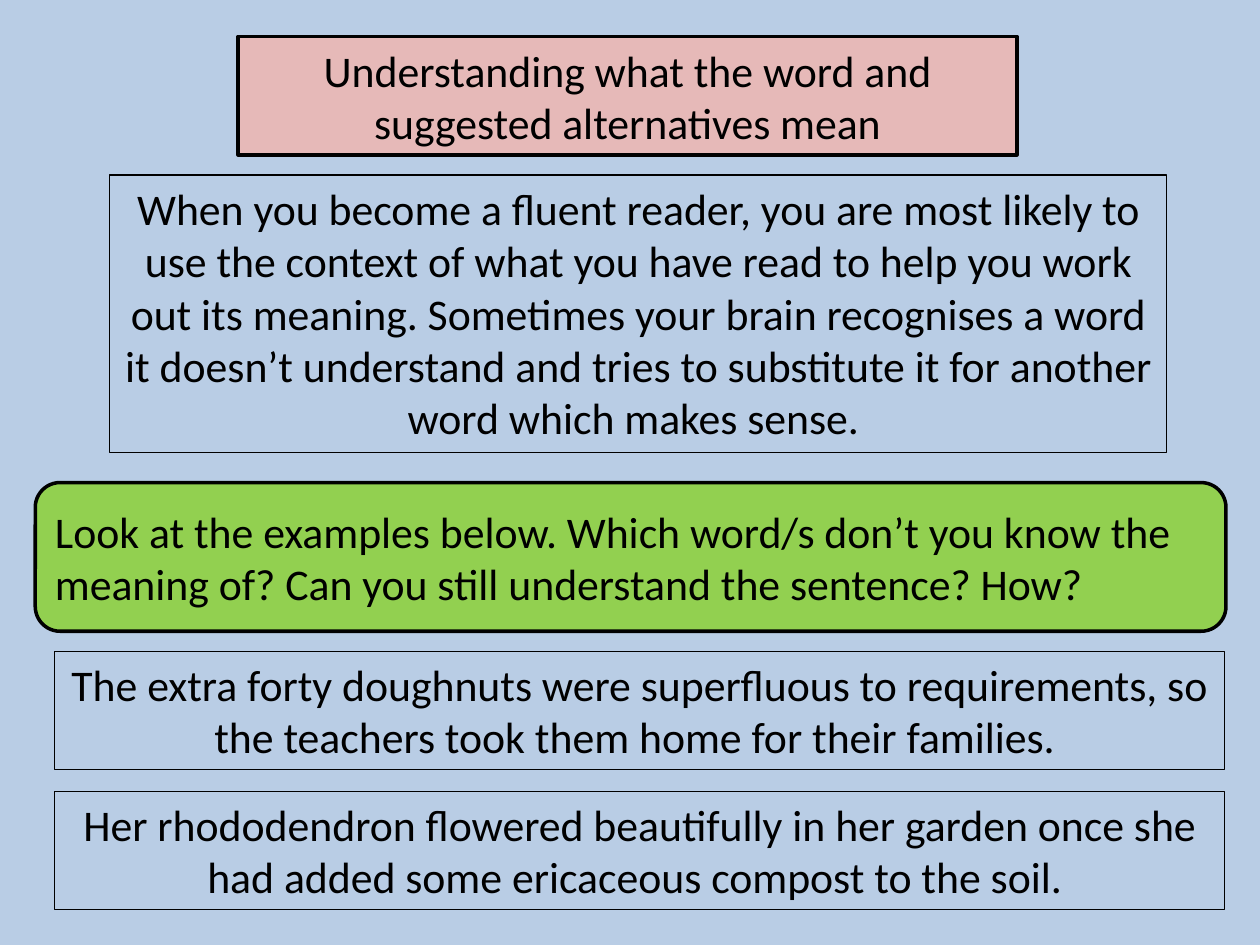
from lxml import etree
from pptx import Presentation
from pptx.dml.color import RGBColor
from pptx.enum import shapes, text
from pptx.oxml import ns
from pptx.util import Inches, Pt

BLUE = RGBColor(0xB9, 0xCD, 0xE5)
PINK = RGBColor(0xE6, 0xB9, 0xB8)
GREEN = RGBColor(0x92, 0xD0, 0x50)
BLACK = RGBColor(0, 0, 0)


def format_box(sp, words, fill, line_width, align):
    if fill is None:
        sp.fill.background()
    else:
        sp.fill.solid()
        sp.fill.fore_color.rgb = fill
    sp.line.color.rgb = BLACK
    sp.line.width = Pt(line_width)
    tf = sp.text_frame
    tf.text = words
    tf.word_wrap = True
    tf.auto_size = text.MSO_AUTO_SIZE.NONE
    tf.vertical_anchor = text.MSO_ANCHOR.MIDDLE
    p = tf.paragraphs[0]
    p.alignment = align
    font = p.runs[0].font
    font.name = "Calibri"
    font.size = Pt(25)
    font.color.rgb = BLACK


prs = Presentation()
prs.slide_width, prs.slide_height = Inches(10), Inches(7.5)
s = prs.slides.add_slide(prs.slide_layouts[5])
s.background.fill.solid()
s.background.fill.fore_color.rgb = BLUE

# Title in a rounded box
title = s.shapes.title
title.left, title.top = Inches(1.89), Inches(0.29)
title.width, title.height = Inches(6.18), Inches(0.94)
geometry = etree.Element(ns.qn("a:prstGeom"), prst="roundRect")
etree.SubElement(geometry, ns.qn("a:avLst"))
title.element.spPr.insert(1, geometry)
format_box(title, "Understanding what the word and suggested alternatives mean",
           PINK, 2, text.PP_ALIGN.CENTER)

# Question in a rounded box
question = s.shapes.add_shape(shapes.MSO_SHAPE.ROUNDED_RECTANGLE,
                              Inches(0.28), Inches(3.83), Inches(9.45), Inches(1.18))
question.shadow.inherit = False
format_box(question, "Look at the examples below. Which word/s don’t you know the "
           "meaning of? Can you still understand the sentence? How?",
           GREEN, 2, text.PP_ALIGN.LEFT)

# Explanation and example sentences in outlined text boxes
outlined = [
    (0.87, 1.39, 8.39, 2.2,
     "When you become a fluent reader, you are most likely to use the context of "
     "what you have read to help you work out its meaning. Sometimes your brain "
     "recognises a word it doesn’t understand and tries to substitute it for "
     "another word which makes sense. "),
    (0.43, 5.17, 9.29, 0.94,
     "The extra forty doughnuts were superfluous to requirements, so the teachers "
     "took them home for their families. "),
    (0.43, 6.28, 9.29, 0.94,
     "Her rhododendron flowered beautifully in her garden once she had added some "
     "ericaceous compost to the soil. "),
]
for left, top, width, height, words in outlined:
    box = s.shapes.add_textbox(Inches(left), Inches(top), Inches(width), Inches(height))
    format_box(box, words, None, 0.75, text.PP_ALIGN.CENTER)
    box.text_frame.vertical_anchor = text.MSO_ANCHOR.TOP
    box.text_frame.auto_size = text.MSO_AUTO_SIZE.SHAPE_TO_FIT_TEXT

prs.save("out.pptx")
